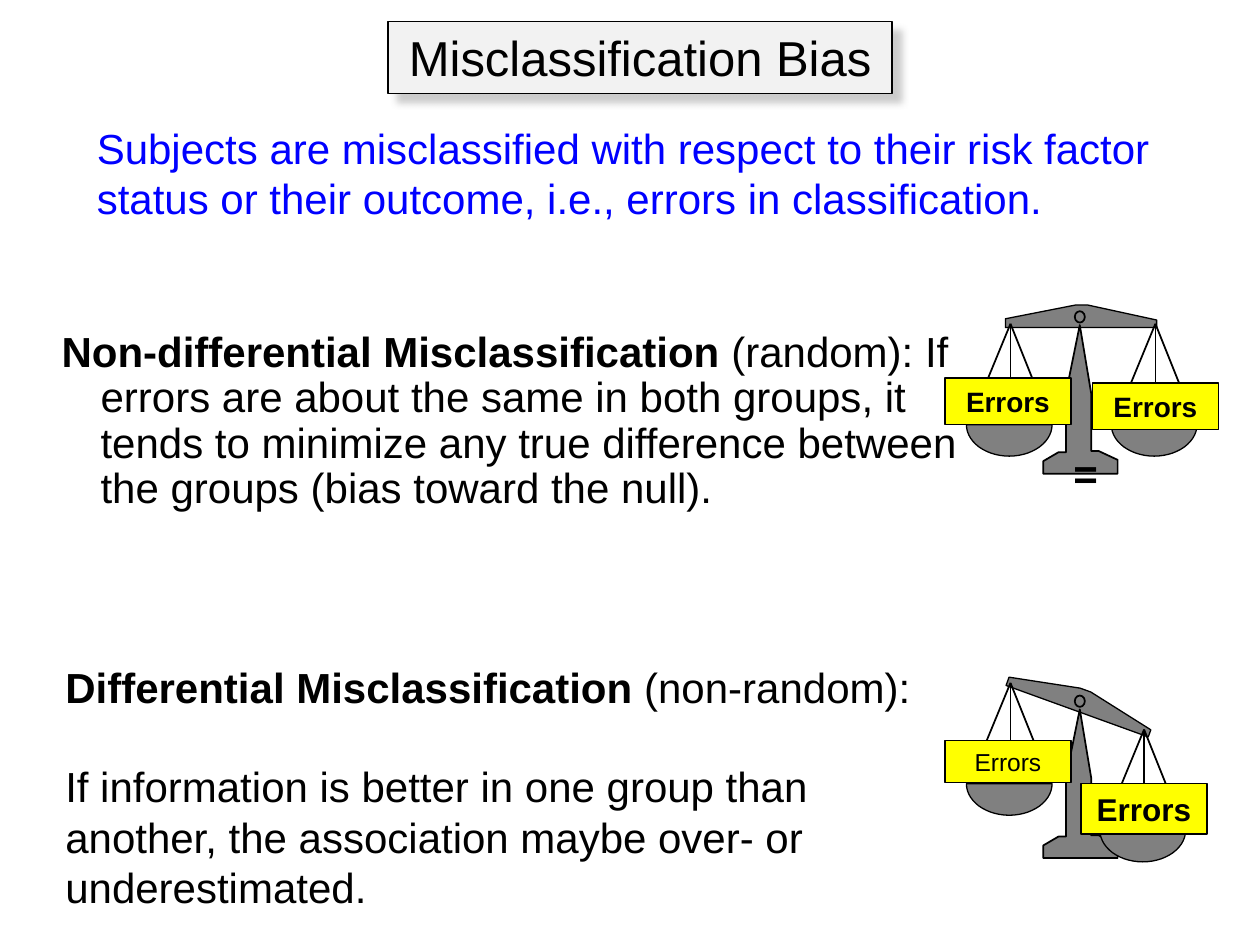
import math

from lxml import etree
from pptx import Presentation
from pptx import util as u
from pptx.dml.color import RGBColor
from pptx.enum import shapes, text
from pptx.oxml.ns import qn

COLORS = {
    "ink": "000000",
    "intro": "0000FF",
    "metal": "808080",
    "label": "FFFF00",
    "title": "F2F2F2",
}
COLUMNS, ROWS = 10, 7.5
FONT = "Arial"

# Outlines of a balance, measured from the centre of the beam and the top of the mast
BEAM = [(-0.6, 0.09), (0.6, 0.09), (0.6, 0.03), (0.05, -0.09), (-0.04, -0.09), (-0.6, 0.02)]
MAST = [(0, 0), (0.09, 0.54), (0.09, 1), (0.15, 1), (0.3, 1.07), (0.3, 1.18),
        (-0.29, 1.18), (-0.29, 1.08), (-0.17, 1.01), (-0.11, 1.01), (-0.11, 0.54)]
PAN_RADIUS, PAN_DEPTH, ROPE = 0.34, 0.25, 0.8


def color(name):
    return RGBColor.from_string(COLORS[name])


def moved(points, x, y):
    return [(x + px, y + py) for px, py in points]


def rotated(points, degrees):
    c, s = math.cos(math.radians(degrees)), math.sin(math.radians(degrees))
    return [(px * c - py * s, px * s + py * c) for px, py in points]


def write(paragraph, words, size=24, bold=False, ink="ink"):
    """Append one formatted run to the paragraph."""
    run = paragraph.add_run()
    run.text = words
    run.font.name, run.font.size, run.font.bold = FONT, u.Pt(size), bold
    run.font.color.rgb = color(ink)


class Board:
    """Draws on one slide; lengths are in grid columns and rows."""

    def __init__(self, deck):
        self.slide = deck.slides.add_slide(deck.slide_layouts[6])
        self.shapes = self.slide.shapes
        self.column = deck.slide_width / COLUMNS
        self.row = deck.slide_height / ROWS

    def place(self, x, y):
        return round(x * self.column), round(y * self.row)

    def paint(self, shape, fill, width):
        shape.shadow.inherit = False
        shape.fill.solid()
        shape.fill.fore_color.rgb = color(fill)
        shape.line.color.rgb = color("ink")
        shape.line.width = u.Pt(width)
        return shape

    def text_box(self, x, y, w, h, wrap=True):
        """Add an empty text box and return its first paragraph."""
        frame = self.shapes.add_textbox(*self.place(x, y), *self.place(w, h)).text_frame
        frame.word_wrap = wrap
        return frame.paragraphs[0]

    def preset(self, kind, x, y, w, h, fill, width=0.75):
        shape = self.shapes.add_shape(kind, *self.place(x, y), *self.place(w, h))
        return self.paint(shape, fill, width)

    def plate(self, x, y, w, h, words, fill="label", **style):
        """Add a rectangle with centred words."""
        shape = self.preset(shapes.MSO_SHAPE.RECTANGLE, x, y, w, h, fill)
        shape.text_frame.vertical_anchor = text.MSO_ANCHOR.MIDDLE
        paragraph = shape.text_frame.paragraphs[0]
        paragraph.alignment = text.PP_ALIGN.CENTER
        write(paragraph, words, **style)
        return shape

    def outline(self, points, width=0.75):
        first, *rest = [self.place(*point) for point in points]
        builder = self.shapes.build_freeform(*first)
        builder.add_line_segments(rest, close=True)
        self.paint(builder.convert_to_shape(), "metal", width)

    def rope(self, start, end):
        line = self.shapes.add_connector(
            shapes.MSO_CONNECTOR.STRAIGHT, *self.place(*start), *self.place(*end))
        line.line.color.rgb = color("ink")
        line.line.width = u.Pt(1)
        etree.SubElement(line._element.spPr, qn("a:effectLst"))

    def pan(self, x, y):
        """Hang a bowl on three ropes from the hook at x, y."""
        for spread in (0.32, 0, -0.33):
            self.rope((x, y), (x + spread, y + ROPE))
        angles = [math.pi * step / 28 for step in range(29)]
        bowl = [(PAN_RADIUS * math.cos(a), PAN_DEPTH * math.sin(a)) for a in angles]
        self.outline(moved(bowl, x - 0.01, y + ROPE))

    def balance(self, x, y, hooks, tilt=0):
        """Draw a balance whose mast top is at x, y."""
        self.outline(moved(rotated(BEAM, tilt), x + 0.01, y - 0.07))
        self.preset(shapes.MSO_SHAPE.OVAL, x - 0.04, y - 0.11, 0.08, 0.09, "metal", 1)
        self.outline(moved(MAST, x, y), 1)
        for hook in hooks:
            self.pan(*hook)

    def drop_shadow(self, shape):
        effects = shape._element.spPr.find(qn("a:effectLst"))
        cast = etree.SubElement(effects, qn("a:outerShdw"), blurRad=str(u.Pt(4)),
                                dist=str(u.Pt(7)), dir=str(45 * 60000),
                                algn="tl", rotWithShape="0")
        tint = etree.SubElement(cast, qn("a:srgbClr"), val=COLORS["metal"])
        etree.SubElement(tint, qn("a:alpha"), val="40000")


def main():
    deck = Presentation()
    deck.slide_width, deck.slide_height = u.Inches(10), u.Inches(7.5)
    board = Board(deck)

    random_error = board.text_box(0.39, 2.58, 7.61, 1.67)
    random_error.line_spacing = 0.9
    indents = random_error._p.get_or_add_pPr()
    indents.set("marL", str(u.Inches(0.31)))
    indents.set("indent", str(u.Inches(-0.31)))
    write(random_error, "Non-differential Misclassification ", bold=True)
    write(random_error, "(random): If errors are about the same in both groups, it tends to "
                        "minimize any true difference between the groups "
                        "(bias toward the null).")

    board.balance(8.57, 2.58, [(8.02, 2.57), (9.17, 2.57)])
    board.plate(7.5, 3, 1, 0.37, "Errors", size=16, bold=True)
    board.plate(8.67, 3.04, 1, 0.37, "Errors", size=16, bold=True)

    intro = board.text_box(0.67, 0.92, 8.67, 0.91)
    write(intro, "Subjects are misclassified with respect to their risk factor status "
                 "or their outcome, i.e., errors in classification.", ink="intro")

    board.balance(8.57, 5.63, [(8.02, 5.42), (9.08, 5.79)], tilt=19.9)
    board.plate(8.58, 6.22, 1, 0.4, "Errors", size=18, bold=True)
    board.plate(7.5, 5.88, 1, 0.33, "Errors", size=14)

    write(board.text_box(8.42, 3.5, 0.4, 0.5, wrap=False), "=", bold=True)

    directed_error = board.text_box(0.42, 5.2, 7.08, 1.72)
    write(directed_error, "Differential Misclassification ", bold=True)
    write(directed_error, "(non-random):")
    directed_error.space_after = u.Pt(28)
    effect = directed_error._parent.add_paragraph()
    write(effect, "If information is better in one group than another, "
                  "the association maybe over- or underestimated.")

    title = board.plate(3.08, 0.17, 4, 0.57, "Misclassification Bias", fill="title", size=28)
    board.drop_shadow(title)

    deck.save("out.pptx")


if __name__ == "__main__":
    main()
